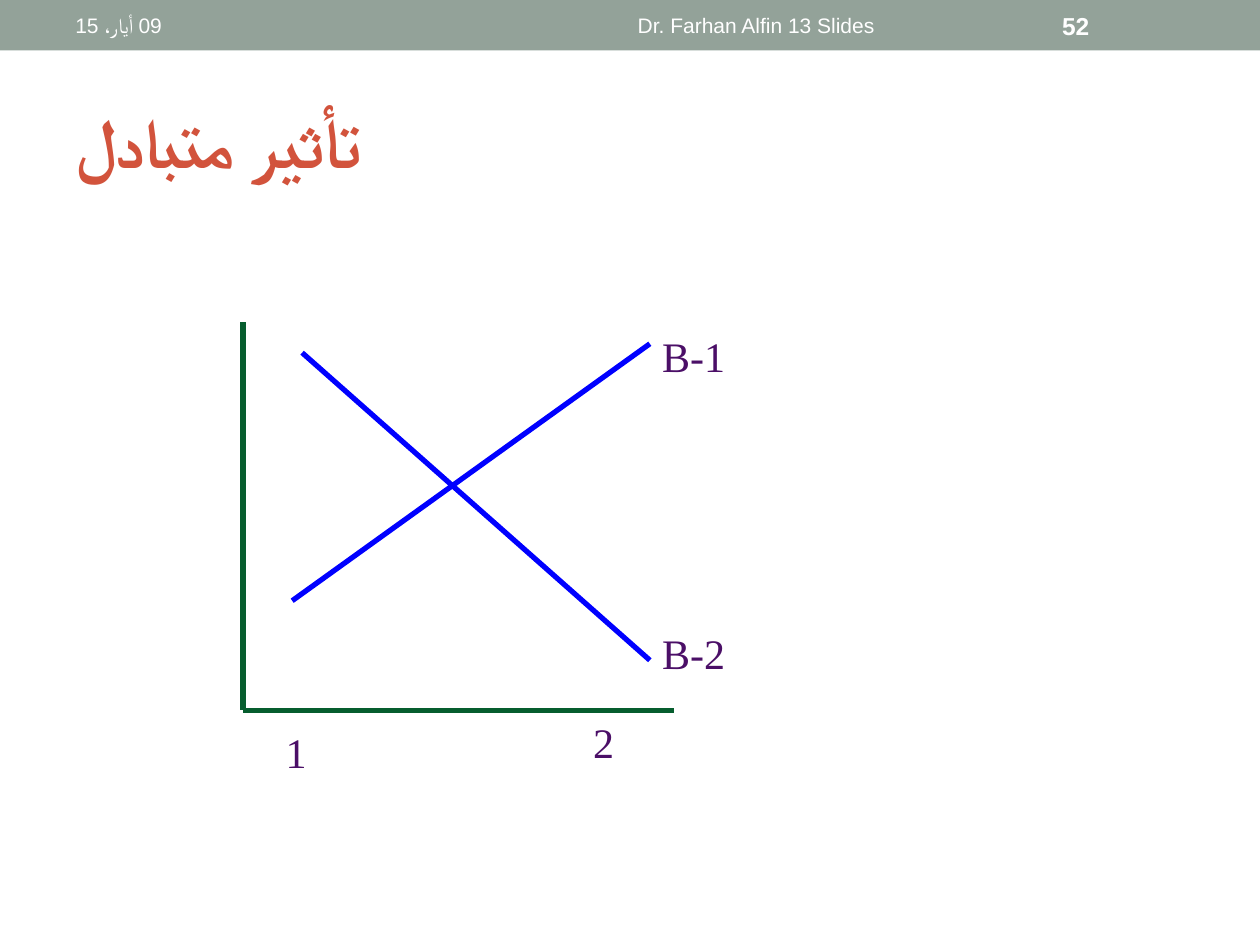
from dataclasses import dataclass

from lxml import etree
from pptx import Presentation
from pptx.dml.color import RGBColor
from pptx.enum import shapes, text
from pptx.oxml import ns
from pptx.util import Cm, Pt


@dataclass(frozen=True)
class Theme:
    band: RGBColor = RGBColor.from_string("93A299")
    title: RGBColor = RGBColor.from_string("D2533C")
    header_text: RGBColor = RGBColor.from_string("FFFFFF")
    axis: RGBColor = RGBColor.from_string("065D2E")
    effect: RGBColor = RGBColor.from_string("0000FF")
    label: RGBColor = RGBColor.from_string("4B0F67")
    sans: str = "Arial"
    serif: str = "Times New Roman"
    title_size: int = 40
    label_size: int = 24
    number_size: int = 14
    header_size: int = 12
    line_width: int = 3


THEME = Theme()


def add_text(slide, box, words, size, color, font_name=THEME.sans, bold=False,
             rtl=False, align=text.PP_ALIGN.LEFT, anchor=text.MSO_ANCHOR.MIDDLE):
    """Place one line of text in box (left, top, width, height in cm)."""
    frame = slide.shapes.add_textbox(*map(Cm, box)).text_frame
    frame.word_wrap = True
    frame.vertical_anchor = anchor
    paragraph = frame.paragraphs[0]
    paragraph.text = words
    paragraph.alignment = align
    font = paragraph.font
    font.name, font.size, font.bold = font_name, Pt(size), bold
    font.color.rgb = color
    if rtl:
        properties = paragraph._p.get_or_add_pPr()
        properties.set("rtl", "1")
        complex_font = etree.SubElement(properties.find(ns.qn("a:defRPr")), ns.qn("a:cs"))
        complex_font.set("typeface", font_name)
    return paragraph


def add_line(slide, start, end, color):
    line = slide.shapes.add_connector(
        shapes.MSO_CONNECTOR.STRAIGHT, *map(Cm, (*start, *end)))
    line.line.color.rgb = color
    line.line.width = Pt(THEME.line_width)
    etree.SubElement(line._element.spPr, ns.qn("a:effectLst"))


def add_header(slide, left, top, width, height):
    band = slide.shapes.add_shape(
        shapes.MSO_SHAPE.RECTANGLE, *map(Cm, (left, top, width, height)))
    band.shadow.inherit = False
    band.fill.solid()
    band.fill.fore_color.rgb = THEME.band
    band.line.fill.background()

    inset = 0.05
    entries = [
        (1.27, 8.05, "09 أيار، 15", THEME.header_size, False, text.PP_ALIGN.LEFT),
        (9.53, 11.43, "Dr. Farhan Alfin 13 Slides", THEME.header_size, False,
         text.PP_ALIGN.CENTER),
        (21.16, 2.97, "52", THEME.number_size, True, text.PP_ALIGN.LEFT),
    ]
    for offset, entry_width, words, size, bold, align in entries:
        box = (left + offset, top + inset, entry_width, height - 2 * inset)
        add_text(slide, box, words, size, THEME.header_text,
                 bold=bold, rtl=True, align=align)


def add_title(slide, *box):
    paragraph = add_text(slide, box, "تأثير متبادل", THEME.title_size,
                         THEME.title, bold=True, rtl=True)
    paragraph._p.pPr.find(ns.qn("a:defRPr")).set("spc", "-100")


def add_interaction_plot(slide, left, top, width, height):
    """Draw two crossing effects; the box is the area spanned by the axes."""
    origin = (left, top + height)
    effect_end = 8.2
    for start, end in [((1.19, 0.61), (effect_end, 6.81)),
                       ((effect_end, 0.43), (0.99, 5.61))]:
        add_line(slide, (left + start[0], top + start[1]),
                 (left + end[0], top + end[1]), THEME.effect)
    add_line(slide, (left, top), origin, THEME.axis)
    add_line(slide, origin, (left + width, top + height), THEME.axis)

    labels = [
        ("B-1", effect_end, 0.03, 5.21),
        ("B-2", effect_end, 6.02, 3.4),
        ("1", 0.61, height + 0.2, 2.59),
        ("2", 6.81, height, 2.01),
    ]
    for words, x, y, label_width in labels:
        paragraph = add_text(slide, (left + x, top + y, label_width, 1.27), words,
                             THEME.label_size, THEME.label, THEME.serif,
                             anchor=text.MSO_ANCHOR.TOP)
        paragraph.space_before = Pt(2)


def main():
    presentation = Presentation()
    presentation.slide_width, presentation.slide_height = Cm(25.4), Cm(19.05)
    slide = presentation.slides.add_slide(presentation.slide_layouts[6])
    add_header(slide, 0, 0, 25.4, 1.02)
    add_title(slide, 1.27, 1.47, 22.86, 2.74)
    add_interaction_plot(slide, 4.9, 6.5, 8.69, 7.82)
    presentation.save("out.pptx")


if __name__ == "__main__":
    main()
